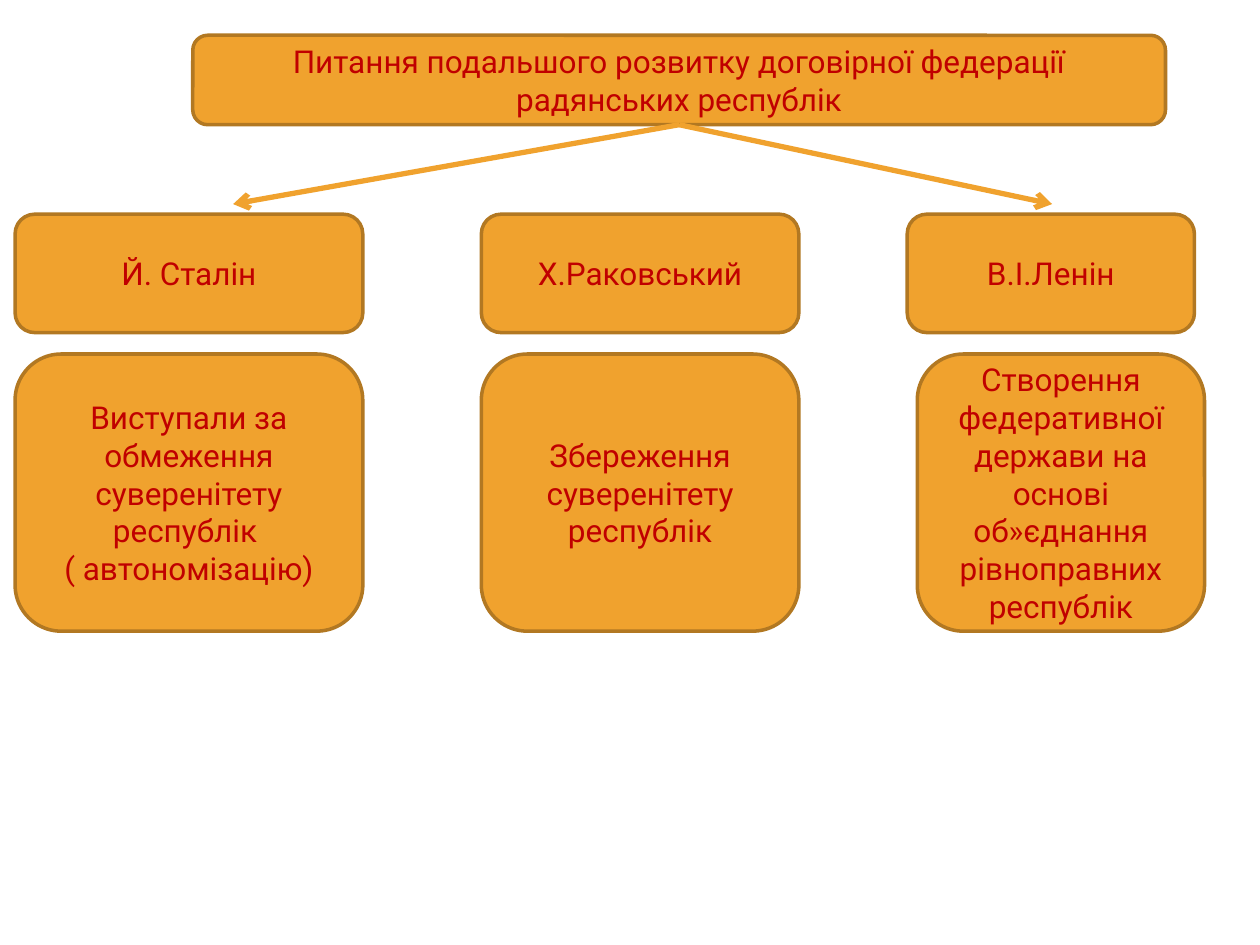
from dataclasses import dataclass

from lxml import etree
from pptx import Presentation
from pptx.dml.color import RGBColor
from pptx.enum.shapes import MSO_CONNECTOR, MSO_SHAPE
from pptx.enum.text import MSO_ANCHOR, PP_ALIGN
from pptx.oxml.ns import qn
from pptx.shapes.autoshape import Shape
from pptx.slide import Slide
from pptx.util import Inches, Pt

ROUNDED = MSO_SHAPE.ROUNDED_RECTANGLE
STRAIGHT = MSO_CONNECTOR.STRAIGHT
MIDDLE = MSO_ANCHOR.MIDDLE
CENTER = PP_ALIGN.CENTER
BOTTOM_SITE = 2


@dataclass(frozen=True)
class Theme:
    fill: RGBColor = RGBColor(0xF0, 0xA2, 0x2E)
    border: RGBColor = RGBColor(0xB2, 0x78, 0x22)
    text: RGBColor = RGBColor(0xC0, 0x00, 0x00)
    font: str = "Roboto"
    text_size: Pt = Pt(18)
    border_width: Pt = Pt(2)
    arrow_width: Pt = Pt(3)


@dataclass(frozen=True)
class Position:
    """A politician and the view he held, one above the other."""
    name: str
    view: str
    name_left: float
    view_left: float
    width: float


THEME = Theme()
TITLE = "Питання подальшого розвитку договірної федерації радянських республік"
NAME_TOP, NAME_HEIGHT = 1.7, 0.94
VIEW_TOP, VIEW_HEIGHT = 2.81, 2.2
ARROW_END_TOP = 1.62
ARROW_ENDS = (1.85, 8.35)
POSITIONS = (
    Position("Й. Сталін",
             "Виступали за обмеження суверенітету республік \n( автономізацію)",
             0.12, 0.12, 2.76),
    Position("Х.Раковський", "Збереження суверенітету республік", 3.82, 3.82, 2.52),
    Position("В.І.Ленін",
             "Створення федеративної держави на основі об»єднання "
             "рівноправних республік",
             7.2, 7.28, 2.28),
)


def add_box(slide: Slide, text: str, left: float, top: float,
            width: float, height: float) -> Shape:
    shape = slide.shapes.add_shape(
        ROUNDED, Inches(left), Inches(top), Inches(width), Inches(height))
    shape.shadow.inherit = False
    shape.fill.solid()
    shape.fill.fore_color.rgb = THEME.fill
    shape.line.color.rgb = THEME.border
    shape.line.width = THEME.border_width
    frame = shape.text_frame
    frame.word_wrap = True
    frame.vertical_anchor = MIDDLE
    frame.text = text
    for paragraph in frame.paragraphs:
        paragraph.alignment = CENTER
        paragraph.font.name = THEME.font
        paragraph.font.size = THEME.text_size
        paragraph.font.color.rgb = THEME.text
    return shape


def add_arrow(slide: Slide, source: Shape, end_left: float, end_top: float) -> None:
    connector = slide.shapes.add_connector(
        STRAIGHT, source.left + source.width // 2, source.top + source.height,
        Inches(end_left), Inches(end_top))
    connector.begin_connect(source, BOTTOM_SITE)
    connector.line.color.rgb = THEME.fill
    connector.line.width = THEME.arrow_width
    # Arrowhead at the end, no shadow
    etree.SubElement(connector.line._get_or_add_ln(), qn("a:tailEnd"), type="arrow")
    etree.SubElement(connector._element.spPr, qn("a:effectLst"))


def main() -> None:
    presentation = Presentation()
    presentation.slide_width = Inches(10)
    presentation.slide_height = Inches(7.5)
    slide = presentation.slides.add_slide(presentation.slide_layouts[6])

    # Question at the top
    title = add_box(slide, TITLE, 1.53, 0.28, 7.72, 0.71)

    # Politicians and their views
    for position in POSITIONS:
        add_box(slide, position.name, position.name_left, NAME_TOP,
                position.width, NAME_HEIGHT)
        add_box(slide, position.view, position.view_left, VIEW_TOP,
                position.width, VIEW_HEIGHT)

    # Arrows to the outer columns
    for end_left in ARROW_ENDS:
        add_arrow(slide, title, end_left, ARROW_END_TOP)

    presentation.save("out.pptx")


if __name__ == "__main__":
    main()
